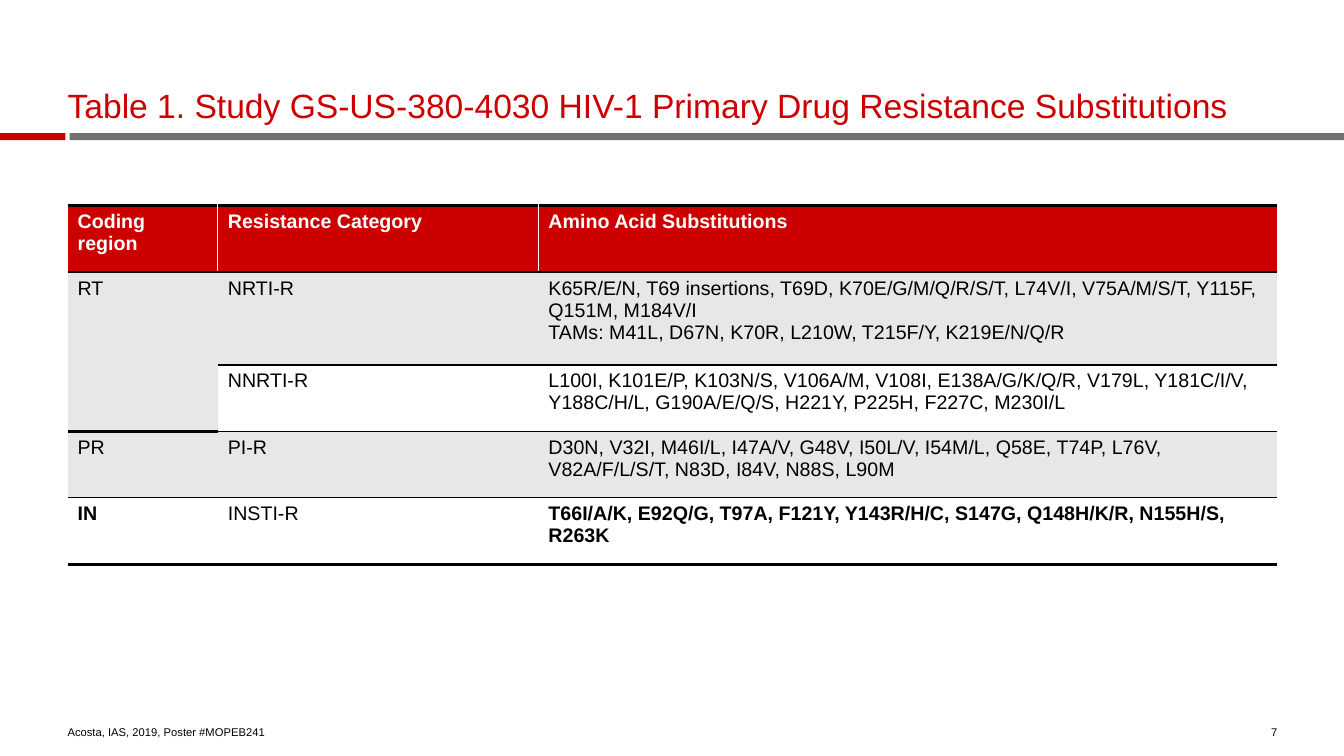
import pptx
import pptx.util
import pptx.dml.color
import pptx.enum.shapes
import pptx.enum.text
import pptx.oxml
import pptx.oxml.ns

Inches, Pt = pptx.util.Inches, pptx.util.Pt
RED, GREY, BAND, BLACK, WHITE = "CC0000", "717171", "E7E7E7", "000000", "FFFFFF"


def color(value):
    return pptx.dml.color.RGBColor.from_string(value)


def format_text(tf, size, text_color, bold=False):
    for p in tf.paragraphs:
        for r in p.runs:
            r.font.name = "Arial"
            r.font.size = Pt(size)
            r.font.bold = bold
            r.font.color.rgb = color(text_color)


prs = pptx.Presentation()
prs.slide_width, prs.slide_height = Inches(13.33), Inches(7.5)
slide = prs.slides.add_slide(prs.slide_layouts[5])

# Divider bars under the title
for left, width, fill in [(0.69, 12.64, GREY), (0, 0.65, RED)]:
    bar = slide.shapes.add_shape(pptx.enum.shapes.MSO_SHAPE.RECTANGLE,
                                 Inches(left), Inches(1.32), Inches(width), Inches(0.07))
    bar.shadow.inherit = False
    bar.fill.solid()
    bar.fill.fore_color.rgb = color(fill)
    bar.line.fill.background()

# Title and footer texts
title = slide.shapes.title
title.left, title.top, title.width, title.height = [Inches(v) for v in (0.67, 0.51, 12, 0.74)]
source = slide.shapes.add_textbox(Inches(0.67), Inches(7.15), Inches(4.44), Inches(0.18))
number = slide.shapes.add_textbox(Inches(12.31), Inches(7.15), Inches(0.36), Inches(0.18))
LEFT, RIGHT = pptx.enum.text.PP_ALIGN.LEFT, pptx.enum.text.PP_ALIGN.RIGHT
for sp, text, size, text_color, align in [
    (title, "Table 1. Study GS-US-380-4030 HIV-1 Primary Drug Resistance Substitutions", 24, RED, LEFT),
    (source, "Acosta, IAS, 2019, Poster #MOPEB241", 8, BLACK, LEFT),
    (number, "7", 8, BLACK, RIGHT),
]:
    tf = sp.text_frame
    tf.text = text
    tf.word_wrap = True
    tf.auto_size = pptx.enum.text.MSO_AUTO_SIZE.NONE
    tf.vertical_anchor = pptx.enum.text.MSO_ANCHOR.BOTTOM
    tf.margin_left = tf.margin_right = tf.margin_top = tf.margin_bottom = 0
    tf.paragraphs[0].alignment = align
    format_text(tf, size, text_color)
title.text_frame.paragraphs[0].line_spacing = 0.9

# Table contents
rows = [
    ("Coding region", "Resistance Category", "Amino Acid Substitutions"),
    ("RT", "NRTI-R",
     "K65R/E/N, T69 insertions, T69D, K70E/G/M/Q/R/S/T, L74V/I, V75A/M/S/T, Y115F, Q151M, M184V/I\n"
     "TAMs: M41L, D67N, K70R, L210W, T215F/Y, K219E/N/Q/R"),
    ("", "NNRTI-R",
     "L100I, K101E/P, K103N/S, V106A/M, V108I, E138A/G/K/Q/R, V179L, Y181C/I/V, "
     "Y188C/H/L, G190A/E/Q/S, H221Y, P225H, F227C, M230I/L"),
    ("PR", "PI-R",
     "D30N, V32I, M46I/L, I47A/V, G48V, I50L/V, I54M/L, Q58E, T74P, L76V, "
     "V82A/F/L/S/T, N83D, I84V, N88S, L90M"),
    ("IN", "INSTI-R",
     "T66I/A/K, E92Q/G, T97A, F121Y, Y143R/H/C, S147G, Q148H/K/R, N155H/S, R263K"),
]
row_fills = [RED, BAND, WHITE, BAND, WHITE]
# Width of the rule above each row, then of the one closing the table
rules = [2, 2, 0, 1, 1, 2]

table = slide.shapes.add_table(5, 3, Inches(0.67), Inches(2.04), Inches(12), Inches(3.56)).table
style_id = table._tbl.tblPr.find(pptx.oxml.ns.qn("a:tableStyleId"))
style_id.text = "{2D5ABB26-0587-4C30-8999-92F81FD0307C}"  # no style, no grid
for col, width in zip(table.columns, [1.49, 3.18, 7.33]):
    col.width = Inches(width)
for row, height in zip(table.rows, [0.66, 0.92, 0.66, 0.66, 0.66]):
    row.height = Inches(height)

for i, texts in enumerate(rows):
    header = i == 0
    for j, text in enumerate(texts):
        cell = table.cell(i, j)
        cell.text = text
        bold = header or (i == 4 and j != 1)
        format_text(cell.text_frame, 14, WHITE if header else BLACK, bold)

        # Borders
        borders = [("lnL", 1 if header and j > 0 else 0, WHITE),
                   ("lnR", 1 if header and j < 2 else 0, WHITE),
                   ("lnT", rules[i], BLACK),
                   ("lnB", rules[i + 1], BLACK)]
        tcPr = cell._tc.get_or_add_tcPr()
        for tag, width, line_color in borders:
            if width:
                tcPr.append(pptx.oxml.parse_xml(
                    f'<a:{tag} {pptx.oxml.ns.nsdecls("a")} w="{Pt(width)}"><a:solidFill>'
                    f'<a:srgbClr val="{line_color}"/></a:solidFill></a:{tag}>'))

        cell.fill.solid()
        cell.fill.fore_color.rgb = color(row_fills[i])
table.cell(1, 0).merge(table.cell(2, 0))

prs.save("out.pptx")
